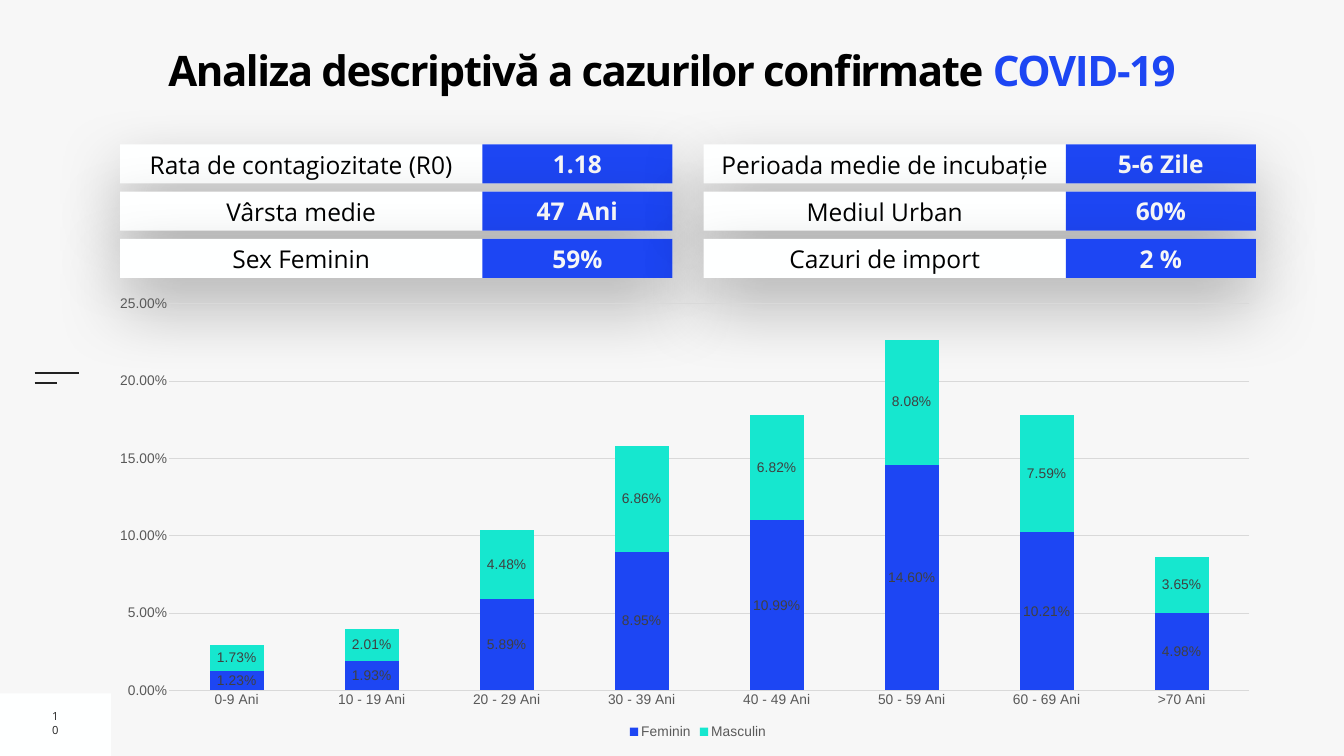
"""Build a slide with key COVID-19 figures and confirmed cases by age and sex."""

from lxml.etree import SubElement
from pptx import Presentation
from pptx.chart.data import CategoryChartData
from pptx.dml.color import RGBColor
from pptx.enum.chart import XL_CHART_TYPE, XL_LABEL_POSITION, XL_LEGEND_POSITION, XL_TICK_MARK
from pptx.enum.shapes import MSO_CONNECTOR, MSO_SHAPE
from pptx.enum.text import MSO_ANCHOR, MSO_AUTO_SIZE, PP_ALIGN
from pptx.oxml import parse_xml
from pptx.oxml.ns import nsdecls, qn
from pptx.util import Cm, Pt

BACKGROUND = RGBColor(0xF7, 0xF7, 0xF7)
WHITE = RGBColor(0xFE, 0xFF, 0xFF)
BLACK = RGBColor(0x00, 0x00, 0x00)
DARK = RGBColor(0x22, 0x22, 0x22)
BLUE = RGBColor(0x1D, 0x46, 0xF3)
TURQUOISE = RGBColor(0x16, 0xE7, 0xCF)
AXIS_GRAY = RGBColor(0x59, 0x59, 0x59)
LABEL_GRAY = RGBColor(0x40, 0x40, 0x40)
GRID_GRAY = RGBColor(0xD9, 0xD9, 0xD9)

CARD_SHADOW = (
    f'<a:effectLst {nsdecls("a")}><a:outerShdw blurRad="{Pt(100)}" dist="{Pt(40)}" dir="5400000" '
    'rotWithShape="0"><a:srgbClr val="000000"><a:alpha val="30000"/></a:srgbClr>'
    "</a:outerShdw></a:effectLst>"
)


def add_box(shapes, left, top, width, height, color):
    shape = shapes.add_shape(MSO_SHAPE.RECTANGLE, Cm(left), Cm(top), Cm(width), Cm(height))
    shape.shadow.inherit = False
    shape.fill.solid()
    shape.fill.fore_color.rgb = color
    shape.line.fill.background()
    return shape


def write_text(shape, text, size, color, bold=False):
    frame = shape.text_frame
    frame.word_wrap = True
    frame.vertical_anchor = MSO_ANCHOR.MIDDLE
    frame.margin_left = frame.margin_right = frame.margin_top = frame.margin_bottom = Cm(0.25)
    paragraph = frame.paragraphs[0]
    paragraph.alignment = PP_ALIGN.CENTER
    run = paragraph.add_run()
    run.text = text
    run.font.name = "Open Sans"
    run.font.size = Pt(size)
    run.font.bold = bold
    run.font.color.rgb = color


presentation = Presentation()
presentation.slide_width = Cm(67.74)
presentation.slide_height = Cm(38.1)
slide = presentation.slides.add_slide(presentation.slide_layouts[5])
slide.background.fill.solid()
slide.background.fill.fore_color.rgb = BACKGROUND

add_box(slide.shapes, 0, 34.95, 5.59, 3.15, WHITE)
for line_top, line_right in ((18.82, 3.99), (19.28, 2.87)):
    connector = slide.shapes.add_connector(
        MSO_CONNECTOR.STRAIGHT, Cm(1.75), Cm(line_top), Cm(line_right), Cm(line_top)
    )
    connector.line.color.rgb = DARK
    connector.line.width = Pt(3)
    SubElement(connector._element.spPr, qn("a:effectLst"))
page_number = slide.shapes.add_textbox(Cm(2.36), Cm(35.79), Cm(0.86), Cm(1.3))
write_text(page_number, "10", 16, DARK)

title = slide.shapes.title
title.left, title.top, title.width, title.height = Cm(0), Cm(2.26), Cm(67.74), Cm(4.01)
title_frame = title.text_frame
title_frame.auto_size = MSO_AUTO_SIZE.NONE
title_frame.word_wrap = True
title_frame.vertical_anchor = MSO_ANCHOR.TOP
title_frame.margin_left = title_frame.margin_right = Cm(0)
title_frame.margin_top = title_frame.margin_bottom = Cm(0)
paragraph = title_frame.paragraphs[0]
paragraph.alignment = PP_ALIGN.CENTER
for text, color in (("Analiza descriptivă a cazurilor confirmate ", BLACK), ("COVID-19", BLUE)):
    run = paragraph.add_run()
    run.text = text
    run.font.name = "Open Sans"
    run.font.size = Pt(60)
    run.font.bold = True
    run.font.color.rgb = color
    run.font._element.set("spc", "-200")

card_columns = (
    (6.05, (("Rata de contagiozitate (R0)", "1.18"), ("Vârsta medie", "47  Ani"), ("Sex Feminin", "59%"))),
    (35.46, (("Perioada medie de incubație", "5-6 Zile"), ("Mediul Urban", "60%"), ("Cazuri de import", "2 %"))),
)
for left, cards in card_columns:
    for row, (label, value) in enumerate(cards):
        top = 7.28 + 2.38 * row
        card = slide.shapes.add_group_shape()
        base = add_box(card.shapes, left, top, 27.84, 1.96, WHITE)
        base._element.spPr.remove(base._element.spPr.find(qn("a:effectLst")))
        base._element.spPr.append(parse_xml(CARD_SHADOW))
        label_box = card.shapes.add_textbox(Cm(left + 0.41), Cm(top), Cm(17.45), Cm(2))
        write_text(label_box, label, 35, BLACK)
        value_box = add_box(card.shapes, left + 18.26, top, 9.58, 1.96, BLUE)
        write_text(value_box, value, 35, BACKGROUND, bold=True)

chart_data = CategoryChartData(number_format="0.00%")
chart_data.categories = [
    "0-9 Ani", "10 - 19 Ani", "20 - 29 Ani", "30 - 39 Ani",
    "40 - 49 Ani", "50 - 59 Ani", "60 - 69 Ani", ">70 Ani",
]
chart_data.add_series("Feminin", (0.0123, 0.0193, 0.0589, 0.0895, 0.1099, 0.146, 0.1021, 0.0498))
chart_data.add_series("Masculin", (0.0173, 0.0201, 0.0448, 0.0686, 0.0682, 0.0808, 0.0759, 0.0365))
chart = slide.shapes.add_chart(
    XL_CHART_TYPE.COLUMN_STACKED, Cm(6.05), Cm(14.91), Cm(57.25), Cm(22.5), chart_data
).chart
chart.has_title = False
chart.font.name = "Arial"
chart.font.size = Pt(20)
chart.font.color.rgb = AXIS_GRAY
chart.has_legend = True
chart.legend.position = XL_LEGEND_POSITION.BOTTOM
chart.legend.include_in_layout = False

plot = chart.plots[0]
plot.gap_width = 150
plot.overlap = 100
plot.vary_by_categories = False
for series, color in zip(plot.series, (BLUE, TURQUOISE)):
    series.format.fill.solid()
    series.format.fill.fore_color.rgb = color
    labels = series.data_labels
    labels.show_value = True
    labels.position = XL_LABEL_POSITION.CENTER
    labels.number_format = "0.00%"
    labels.number_format_is_linked = False
    labels.font.name = "Arial"
    labels.font.size = Pt(20)
    labels.font.color.rgb = LABEL_GRAY

for axis in (chart.category_axis, chart.value_axis):
    axis.major_tick_mark = XL_TICK_MARK.NONE
    axis.minor_tick_mark = XL_TICK_MARK.NONE
chart.category_axis.format.line.color.rgb = GRID_GRAY
chart.category_axis.format.line.width = Pt(0.75)
value_axis = chart.value_axis
value_axis.minimum_scale = 0
value_axis.maximum_scale = 0.25
value_axis.major_unit = 0.05
value_axis.format.line.fill.background()
value_axis.major_gridlines.format.line.color.rgb = GRID_GRAY
value_axis.major_gridlines.format.line.width = Pt(0.75)
value_axis.tick_labels.number_format = "0.00%"
value_axis.tick_labels.number_format_is_linked = False

plot_area = chart._chartSpace.chart.plotArea
for layout in plot_area.findall(qn("c:layout")):
    plot_area.remove(layout)
plot_area.insert(0, parse_xml(
    f'<c:layout {nsdecls("c")}><c:manualLayout><c:layoutTarget val="inner"/>'
    '<c:xMode val="edge"/><c:yMode val="edge"/><c:x val="0.026"/><c:y val="0.01"/>'
    '<c:w val="0.968"/><c:h val="0.873"/></c:manualLayout></c:layout>'
))

presentation.save("out.pptx")
